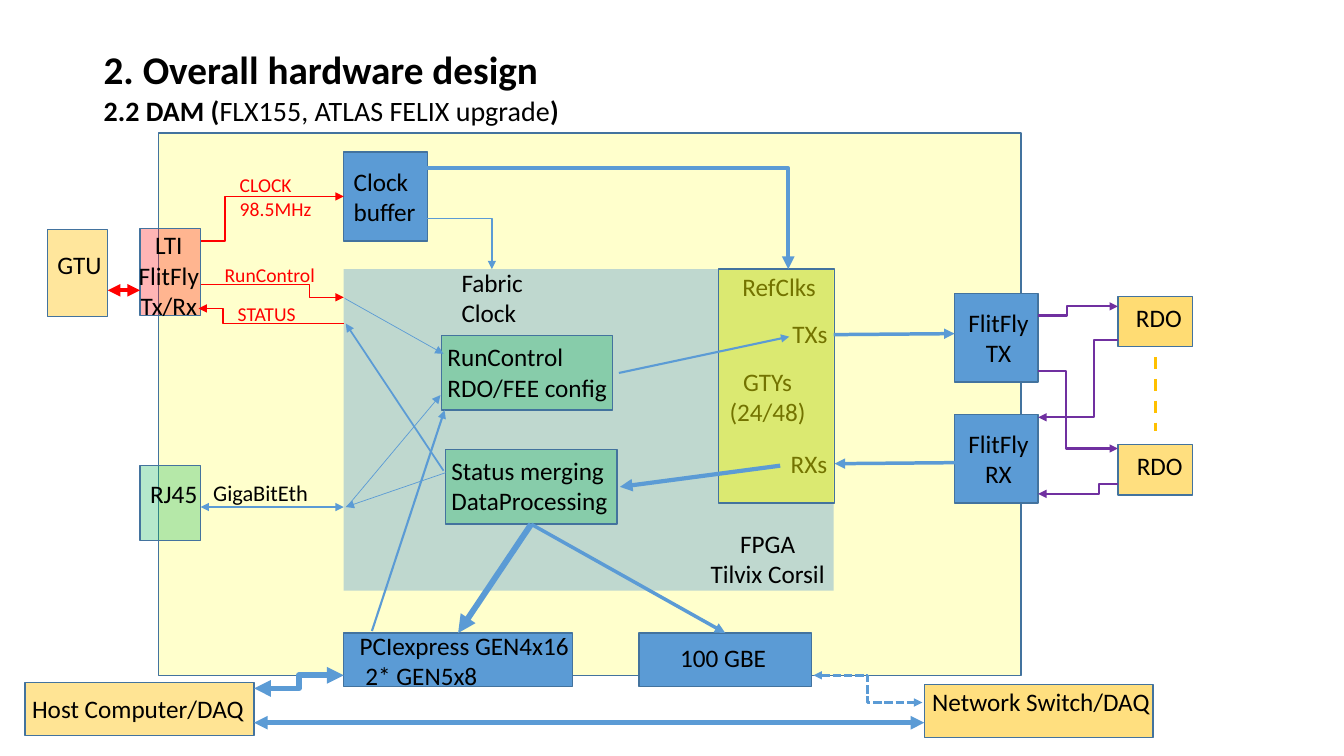
from dataclasses import dataclass
from typing import Optional, Union

from lxml.etree import SubElement
from pptx import Presentation
from pptx.dml.color import RGBColor
from pptx.enum.dml import MSO_LINE
from pptx.enum.shapes import MSO_CONNECTOR, MSO_SHAPE
from pptx.enum.text import MSO_AUTO_SIZE, PP_ALIGN
from pptx.oxml.ns import qn
from pptx.util import Emu, Inches, Pt

CELL = Inches(0.1)  # side of one grid column and row
COLUMNS, ROWS = 133.33, 75
TOP, BOTTOM = 0, 2  # connection sites of a rectangle
FONT = "Calibri"
COLORS = {
    "black": "000000", "red": "FF0000", "blue": "5B9BD5", "outline": "43739E",
    "yellow": "FFFF00", "amber": "FFC000", "green": "00B050", "purple": "7030A0",
}


@dataclass(frozen=True)
class Box:
    column: float
    row: float
    columns: float
    rows: float
    color: str = "blue"
    opacity: int = 100
    outlined: bool = True


@dataclass(frozen=True)
class Label:
    column: float
    row: float
    columns: float
    rows: float
    text: str
    centered: bool = False
    size: int = 18
    color: str = "black"
    bold: bool = False


@dataclass(frozen=True)
class Port:
    """A connection site of a named box."""
    box: str
    site: int


End = Union[tuple[float, float], Port]


@dataclass(frozen=True)
class Link:
    begin: End
    end: End
    width: float
    color: str = "blue"
    bend: Optional[float] = None  # share of the run before an elbow turns
    arrows: str = "end"  # "begin", "end", "both" or "none"
    dash: Optional[MSO_LINE] = None


BOXES = {
    "board": Box(15.7, 13.2, 85.6, 53.8, "yellow", 20),
    "timing module": Box(13.9, 22.7, 6, 8.6, "red", 29),
    "PCI express": Box(34.1, 62.8, 22.7, 5.3),
    "clock buffer": Box(34.1, 15.1, 8.3, 8.8),
    "FPGA": Box(34.1, 26.7, 48.6, 31.9, "blue", 39, outlined=False),
    "GTU": Box(4.7, 22.8, 6, 8.6, "amber", 39),
    "100 GBE": Box(63.4, 62.8, 17.1, 5.3),
    "RJ45": Box(13.9, 46.2, 6, 7.4, "green", 29),
    "optical TX": Box(94.7, 29.1, 8.3, 8.8),
    "optical RX": Box(94.7, 41.1, 8.3, 8.8),
    "upper RDO": Box(110.9, 29.4, 7.4, 5, "amber", 55),
    "lower RDO": Box(110.9, 44.1, 7.4, 5, "amber", 50),
    "host": Box(2.5, 67.7, 22.7, 5.3, "amber", 42),
    "network": Box(91.7, 67.9, 22.7, 5.3, "amber", 50),
    "run control": Box(43.8, 33.3, 17, 7.4, "green", 29),
    "status merging": Box(44.2, 44.6, 17, 7.4, "green", 29),
}
TRANSCEIVER_COVER = Box(71.3, 26.7, 11.5, 23.2, "yellow", 45)

SUBTITLE = Label(9.3, 8.8, 48.6, 4.4, "2.2 DAM (", size=20, bold=True)
LABELS = [
    Label(9.3, 4, 45.6, 5.7, "2. Overall hardware design", size=28, bold=True),
    Label(12.4, 22.3, 8.7, 10.1, "LTI\nFlitFly\nTx/Rx", centered=True),
    Label(34.7, 62, 23, 7.1, "PCIexpress GEN4x16\n 2* GEN5x8"),
    Label(34.1, 16, 8.3, 7.1, "Clock\nbuffer"),
    Label(68.7, 51.9, 14.9, 7.1, "FPGA\nTilvix Corsil", centered=True),
    Label(22.8, 16.7, 9.2, 5.7, "CLOCK\n98.5MHz", size=14, color="red"),
    Label(21.3, 25.6, 11.1, 3.4, "RunControl", size=14, color="red"),
    Label(22.6, 29.5, 7.8, 3.4, "STATUS", size=14, color="red"),
    Label(4.7, 24.2, 6.4, 4, "GTU"),
    Label(66.5, 63.2, 10.6, 4, "100 GBE"),
    Label(13.9, 47, 6.8, 4, "RJ45"),
    Label(20.1, 47, 11.5, 3.7, "GigaBitEth", centered=True, size=16),
    Label(44.8, 26, 8.2, 7.1, "Fabric\nClock"),
    Label(72.6, 26.4, 9.4, 4, "RefClks", centered=True),
    Label(71.3, 35.8, 9.7, 7.1, "GTYs\n(24/48)", centered=True),
    Label(77.6, 31.1, 5.5, 4, "TXs", centered=True),
    Label(77.4, 44, 5.7, 4, "RXs", centered=True),
    Label(94.7, 30, 8.7, 7.1, "FlitFly\nTX", centered=True),
    Label(94.7, 42, 8.7, 7.1, "FlitFly\nRX", centered=True),
    Label(111.7, 29.5, 6.6, 4, "RDO"),
    Label(111.8, 44.2, 6.6, 4, "RDO"),
    Label(2.2, 68.3, 23.3, 4, "Host Computer/DAQ"),
    Label(91.5, 67.6, 24.7, 4, "Network Switch/DAQ"),
    Label(43.4, 33.4, 18, 7.1, "RunControl\nRDO/FEE config"),
    Label(43.8, 44.7, 17.6, 7.1, "Status merging\nDataProcessing"),
]

LINKS = [
    Link((19.9, 23.9), (34.1, 19.5), 1, "red", bend=0.17),
    Link((19.9, 28.2), (34.1, 29.5), 1, "red", bend=0.76),
    Link((34.1, 32.1), (19.7, 30.6), 1, "red", bend=0.83),
    Link((10.7, 28.8), (13.9, 28.8), 3, "red", arrows="both"),
    Link((19.9, 50.3), (34.1, 50.3), 1.5, arrows="both"),
    Link((42.4, 21.7), (48.8, 26.7), 1, bend=1),
    Link((42.4, 16.7), (78.2, 26.7), 3, bend=1),
    Link((103, 31.3), (110.9, 30.4), 1.5, "purple", bend=0.36),
    Link((110.9, 48), (103, 49), 1.5, "purple", bend=0.24),
    Link((103, 36.8), (110.9, 44.5), 1.5, "purple", bend=0.35),
    Link((110.9, 33.7), (103, 41.4), 1.5, "purple", bend=0.3),
    Link((114.6, 35.4), (114.6, 42.8), 2.25, "amber", arrows="none", dash=MSO_LINE.DASH),
    Link((82.7, 33.2), (94.7, 33.1), 2.5),
    Link((82.8, 46), (94.8, 45.9), 2.5, arrows="begin"),
    Link((80.7, 67), (91.5, 69.7), 2, bend=0.5, arrows="both", dash=MSO_LINE.SQUARE_DOT),
    Link((25.2, 68.3), (34.1, 67), 4, bend=0.5, arrows="both"),
    Link((77.4, 46.2), (61.5, 48.3), 3),
    Link((61.4, 37), (78.3, 33.4), 1.5),
    Link(Port("status merging", BOTTOM), Port("100 GBE", TOP), 2.5),
    Link(Port("status merging", BOTTOM), Port("PCI express", TOP), 4.25),
    Link((34.2, 29.6), (44, 35.1), 0.5),
    Link((44, 46.7), (34.3, 32.1), 1.25),
    Link((34.4, 50.3), (43.7, 39.2), 0.5),
    Link((36.9, 62.6), (44.1, 40.7), 1.5),
    Link((44.2, 46.9), (34.3, 50.3), 0.5),
    Link((25.2, 71.7), (91.7, 71.7), 3.25, arrows="both"),
]


def cells(*counts: float) -> list[Emu]:
    return [Emu(round(count * CELL)) for count in counts]


def color(name: str) -> RGBColor:
    return RGBColor.from_string(COLORS[name])


def draw_box(slide, box: Box):
    shape = slide.shapes.add_shape(
        MSO_SHAPE.RECTANGLE, *cells(box.column, box.row, box.columns, box.rows))
    shape.shadow.inherit = False
    shape.fill.solid()
    shape.fill.fore_color.rgb = color(box.color)
    if box.opacity < 100:
        fill_color = shape._element.spPr.find(qn("a:solidFill"))[0]
        SubElement(fill_color, qn("a:alpha"), val=str(box.opacity * 1000))
    if box.outlined:
        shape.line.color.rgb = color("outline")
        shape.line.width = Pt(1)
    else:
        shape.line.fill.background()
    return shape


def draw_label(slide, label: Label):
    """Draw a text box and return its last paragraph."""
    text_frame = slide.shapes.add_textbox(
        *cells(label.column, label.row, label.columns, label.rows)).text_frame
    text_frame.word_wrap = False
    text_frame.auto_size = MSO_AUTO_SIZE.SHAPE_TO_FIT_TEXT
    text_frame.text = label.text
    for paragraph in text_frame.paragraphs:
        paragraph.alignment = PP_ALIGN.CENTER if label.centered else PP_ALIGN.LEFT
        paragraph.font.name = FONT
        paragraph.font.size = Pt(label.size)
        paragraph.font.bold = label.bold
        paragraph.font.color.rgb = color(label.color)
    return paragraph


def draw_link(slide, link: Link, shapes: dict) -> None:
    kind = MSO_CONNECTOR.STRAIGHT if link.bend is None else MSO_CONNECTOR.ELBOW
    begin, end = ((0, 0) if isinstance(place, Port) else place
                  for place in (link.begin, link.end))
    connector = slide.shapes.add_connector(kind, *cells(*begin, *end))
    if isinstance(link.begin, Port):
        connector.begin_connect(shapes[link.begin.box], link.begin.site)
    if isinstance(link.end, Port):
        connector.end_connect(shapes[link.end.box], link.end.site)
    connector.line.color.rgb = color(link.color)
    connector.line.width = Pt(link.width)
    if link.dash is not None:
        connector.line.dash_style = link.dash
    properties = connector._element.spPr
    line = properties.find(qn("a:ln"))
    for tag, side in (("a:headEnd", "begin"), ("a:tailEnd", "end")):
        if link.arrows in (side, "both"):
            SubElement(line, qn(tag), type="triangle")
    SubElement(properties, qn("a:effectLst"))
    if link.bend is not None:
        adjustments = properties.find(qn("a:prstGeom")).find(qn("a:avLst"))
        SubElement(adjustments, qn("a:gd"), name="adj1",
                   fmla=f"val {round(link.bend * 100000)}")


def main() -> None:
    presentation = Presentation()
    presentation.slide_width, presentation.slide_height = cells(COLUMNS, ROWS)
    slide = presentation.slides.add_slide(presentation.slide_layouts[6])
    shapes = {name: draw_box(slide, box) for name, box in BOXES.items()}
    for label in LABELS:
        draw_label(slide, label)
    subtitle = draw_label(slide, SUBTITLE)
    for text, bold in (("FLX155, ATLAS FELIX upgrade", False), (")", True)):
        run = subtitle.add_run()
        run.text, run.font.bold = text, bold
    draw_box(slide, TRANSCEIVER_COVER)
    for link in LINKS:
        draw_link(slide, link, shapes)
    presentation.save("out.pptx")


if __name__ == "__main__":
    main()
